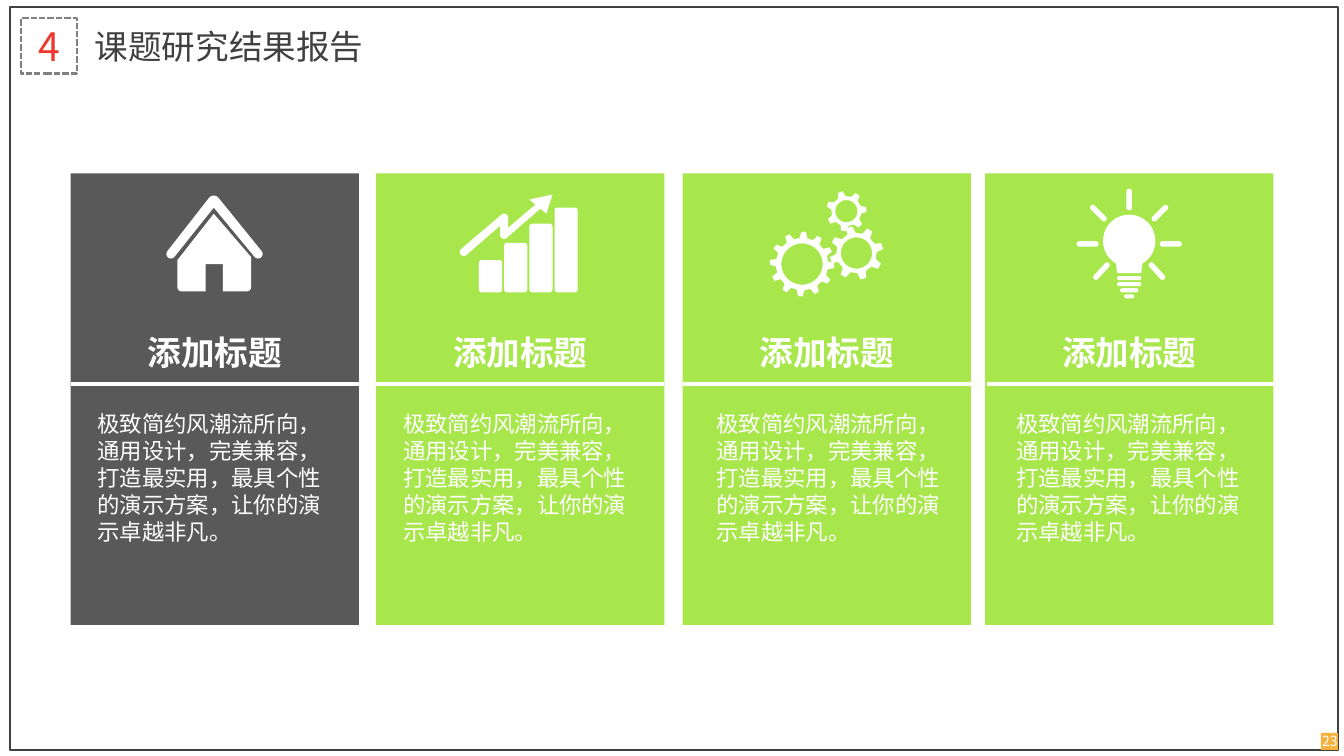
from math import atan2, cos, degrees, radians, sin

from lxml import etree
from pptx import Presentation
from pptx import util as u
from pptx.dml.color import RGBColor
from pptx.enum import dml, shapes, text
from pptx.oxml.ns import qn

CELL = u.Inches(0.1)
FINE = 1000
WHITE, GREY, GREEN, INK = "FFFFFF", "595959", "A8E74B", "404040"
HEADING = "添加标题"
BODY = "极致简约风潮流所向，通用设计，完美兼容，打造最实用，最具个性的演示方案，让你的演示卓越非凡。"


def cells(*lengths):
    return [round(length * CELL) for length in lengths]


def colour(code):
    return RGBColor.from_string(code)


def write(shape, words, size=16, ink=WHITE, bold=False, align="LEFT",
          anchor="TOP", inset=1, pitch=None, font="Noto Sans CJK SC"):
    frame = shape.text_frame
    frame.word_wrap = True
    frame.vertical_anchor = getattr(text.MSO_ANCHOR, anchor)
    frame.margin_left = frame.margin_right = round(inset * CELL)
    frame.margin_top = frame.margin_bottom = round(inset * CELL / 2)
    para = frame.paragraphs[0]
    para.alignment = getattr(text.PP_ALIGN, align)
    if pitch:
        para.line_spacing = u.Pt(pitch)
    span = para.add_run()
    span.text = words
    span.font.size = u.Pt(size)
    span.font.bold = bold
    span.font.color.rgb = colour(ink)
    span.font.name = font
    etree.SubElement(span.font._element, qn("a:ea")).set("typeface", font)


class Canvas:
    def __init__(self, page):
        self.shapes = page.shapes

    def paint(self, shape, fill=None, line=None, weight=1, dash=None):
        shape.shadow.inherit = False
        if fill:
            shape.fill.solid()
            shape.fill.fore_color.rgb = colour(fill)
        else:
            shape.fill.background()
        if line:
            shape.line.color.rgb = colour(line)
            shape.line.width = u.Pt(weight)
            shape.line.dash_style = dash
        else:
            shape.line.fill.background()
        return shape

    def box(self, left, top, width, height, **style):
        kind = shapes.MSO_SHAPE.RECTANGLE
        shape = self.shapes.add_shape(kind, *cells(left, top, width, height))
        return self.paint(shape, **style)

    def label(self, left, top, width, height, words, **style):
        write(self.shapes.add_textbox(*cells(left, top, width, height)), words, **style)

    def rule(self, left, right, row):
        line = self.shapes.add_connector(
            shapes.MSO_CONNECTOR.STRAIGHT, *cells(left, row, right, row))
        line.line.color.rgb = colour(WHITE)
        line.line.width = u.Pt(2.25)
        etree.SubElement(line._element.spPr, qn("a:effectLst"))

    def icon(self, outlines):
        builder = None
        for outline in outlines:
            points = [(x * FINE, y * FINE) for x, y in outline]
            if builder is None:
                builder = self.shapes.build_freeform(*points[0], scale=CELL / FINE)
            else:
                builder.move_to(*points[0])
            builder.add_line_segments(points[1:], close=True)
        self.paint(builder.convert_to_shape(), fill=WHITE)


def arc(x, y, radius, start, end, steps=8):
    angles = [radians(start + (end - start) * i / steps) for i in range(steps + 1)]
    return [(x + radius * cos(a), y + radius * sin(a)) for a in angles]


def bar(left, top, width, height, radius):
    right, bottom = left + width - radius, top + height - radius
    left, top = left + radius, top + radius
    corners = [(left, top), (right, top), (right, bottom), (left, bottom)]
    return [point for i, (x, y) in enumerate(corners)
            for point in arc(x, y, radius, 180 + 90 * i, 270 + 90 * i)]


def ray(x1, y1, x2, y2, radius=0.27):
    turn = degrees(atan2(y2 - y1, x2 - x1))
    return (arc(x1, y1, radius, turn + 90, turn + 270)
            + arc(x2, y2, radius, turn - 90, turn + 90))


def gear(x, y, tip, root, hole, teeth, phase):
    step = 360 / teeth
    rim = []
    for i in range(teeth):
        for radius, share in ((root, -0.28), (tip, -0.14), (tip, 0.14), (root, 0.28)):
            rim += arc(x, y, radius, phase + (i + share) * step, 0, 1)[:1]
    return [rim, arc(x, y, hole, 360, 0, 40)]


def house():
    body = ([(21.2, 21.2), (24.9, 25.5)] + arc(24.5, 28.5, 0.4, 0, 90)
            + [(22.1, 28.9), (22.1, 26.2), (20.4, 26.2), (20.4, 28.9)]
            + arc(18, 28.5, 0.4, 90, 180) + [(17.6, 25.8)])
    roof = (arc(21.2, 20, 0.6, 220, 320) + arc(25.6, 25.2, 0.45, -40, 140)
            + [(21.2, 20.6)] + arc(16.95, 25.2, 0.45, 40, 220))
    return [body, roof]


def growth():
    bars = [bar(47.5 + 2.5 * i, top, 2.3, 29 - top, 0.3)
            for i, top in enumerate((25.8, 24.1, 22.2, 20.6))]
    arrow = ([(54.8, 19.3), (54.2, 21.2), (53.6, 20.7)]
             + arc(50, 23.3, 0.4, 50, 180) + [(49.6, 22.4)]
             + arc(46, 25, 0.4, 50, 230) + arc(50, 21.6, 0.4, 230, 360)
             + [(50.4, 22.6), (53.1, 20.3), (52.5, 19.8)])
    return bars + [arrow]


def gears():
    return (gear(79.55, 26.2, 3.2, 2.6, 2.05, 12, 3)
            + gear(84.95, 25.1, 2.65, 2, 1.55, 8, 30)
            + gear(83.95, 20.95, 2, 1.5, 1.1, 7, -5))


def bulb():
    middle = 112
    glass = arc(middle, 23.9, 2.6, 120, 420, 40) + [(113.2, 27.1), (110.8, 27.1)]
    base = [bar(middle - width / 2, top, width, 0.4, 0.2)
            for top, width in ((27.4, 2.4), (28, 2.4), (28.6, 1.8), (29.2, 1))]
    rays = [ray(middle, 19, middle, 20.6)]
    for far, y1, near, y2 in ((4.95, 24.2, 3.3, 24.2), (3.6, 20.6, 2.5, 21.7),
                              (3.3, 27.5, 2.2, 26.3)):
        rays += [ray(middle + side * far, y1, middle + side * near, y2)
                 for side in (-1, 1)]
    return [glass] + base + rays


def main():
    deck = Presentation()
    deck.slide_width, deck.slide_height = u.Inches(13.33), u.Inches(7.5)
    canvas = Canvas(deck.slides.add_slide(deck.slide_layouts[6]))

    canvas.box(1, 0.7, 131.7, 73.7, line=INK)
    number = canvas.box(2.1, 1.8, 5.5, 5.5, line="808080", weight=1.5,
                        dash=dml.MSO_LINE.SQUARE_DOT)
    write(number, "4", size=28, ink="ED382D", align="CENTER", anchor="MIDDLE", inset=0)
    canvas.label(8.4, 1.8, 35.9, 5.5, "课题研究结果报告", size=24, ink=INK, anchor="MIDDLE")
    canvas.box(131, 72.7, 1.7, 1.7, fill="F7B13F")
    canvas.label(129.7, 72.7, 4.4, 1.7, "23", size=10, align="CENTER", anchor="MIDDLE")

    width = 28.6
    cards = [(7, GREY, 1.7, 0, house), (37.3, GREEN, 1.7, 0, growth),
             (67.7, GREEN, 2.4, 0, gears), (97.7, GREEN, 2.1, 0.2, bulb)]
    for left, fill, indent, shift, icon in cards:
        canvas.box(left, 17.2, width, 44.8, fill=fill)
        canvas.icon(icon())
        canvas.label(left + 5.9, 32.4, 16.8, 5, HEADING, size=24, bold=True,
                     align="CENTER", pitch=28.8)
        canvas.label(left + indent, 40.2, 25.6, 14.5, BODY, pitch=19.2)
        canvas.rule(left + shift, left + shift + width, 38.1)
    deck.save("out.pptx")


if __name__ == "__main__":
    main()
